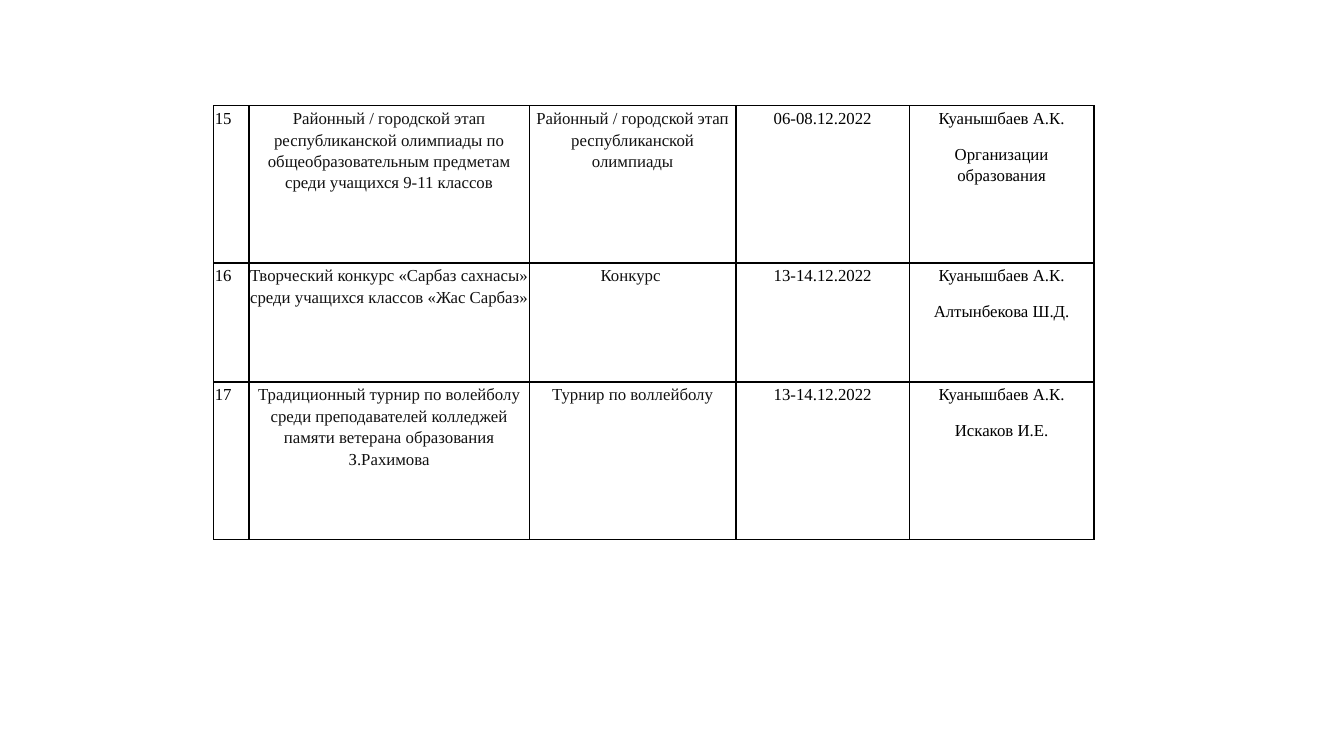
from dataclasses import dataclass

from lxml import etree
from pptx import Presentation
from pptx import util as u
from pptx.dml.color import RGBColor
from pptx.enum import text
from pptx.oxml import ns


@dataclass(frozen=True)
class Theme:
    """Colours, type and line sizes of the slide."""
    font: str = "Times New Roman"
    size: int = 12
    black: str = "000000"
    ink: str = "111111"
    rule: float = 1
    lead: float = 1.15
    gap: int = 10
    inset: float = 0.01


THEME = Theme()
GRID = (1333, 750)
BOX = (212, 105, 873, 430)
COLS = (35, 278, 205, 172, 183)
ROWS = (156, 118, 156)
EVENTS = (
    ("15",
     "Районный / городской этап республиканской олимпиады по "
     "общеобразовательным предметам среди учащихся 9-11 классов",
     "Районный / городской этап республиканской олимпиады",
     "06-08.12.2022", "Куанышбаев А.К.\nОрганизации образования"),
    ("16",
     "Творческий конкурс «Сарбаз сахнасы» среди учащихся классов «Жас Сарбаз»",
     "Конкурс ", "13-14.12.2022", "Куанышбаев А.К.\nАлтынбекова Ш.Д."),
    ("17",
     "Традиционный турнир по волейболу среди преподавателей колледжей "
     "памяти ветерана образования З.Рахимова",
     "Турнир по воллейболу", "13-14.12.2022", "Куанышбаев А.К.\nИскаков И.Е."),
)
CENTRE = dict(align=text.PP_ALIGN.CENTER, after=THEME.gap)
STYLES = (
    dict(),
    dict(CENTRE, color=THEME.ink),
    dict(CENTRE, color=THEME.ink),
    CENTRE,
    CENTRE,
)


def write(frame, words, color=THEME.black, align=text.PP_ALIGN.LEFT, after=0):
    """Fill a text frame with one paragraph per line of words."""
    frame.text = words
    for para in frame.paragraphs:
        para.alignment = align
        para.line_spacing = THEME.lead
        para.space_after = u.Pt(after)
        for run in para.runs:
            run.font.name = THEME.font
            run.font.size = u.Pt(THEME.size)
            run.font.color.rgb = RGBColor.from_string(color)


def edge(cell):
    """Draw the four borders of a cell."""
    props = cell._tc.get_or_add_tcPr()
    for spot, side in enumerate(("lnL", "lnR", "lnT", "lnB")):
        line = etree.Element(ns.qn(f"a:{side}"), w=str(u.Pt(THEME.rule)))
        fill = etree.SubElement(line, ns.qn("a:solidFill"))
        etree.SubElement(fill, ns.qn("a:srgbClr"), val=THEME.black)
        props.insert(spot, line)


def plan(slide, box, unit):
    """Place the table of events in a box given in grid units."""
    left, top, wide, high = (round(n * unit) for n in box)
    table = slide.shapes.add_table(
        len(ROWS), len(COLS), left, top, wide, high).table
    table.first_row = table.horz_banding = False
    for col, share in zip(table.columns, COLS):
        col.width = round(wide * share / sum(COLS))
    for row, share, event in zip(table.rows, ROWS, EVENTS):
        row.height = round(high * share / sum(ROWS))
        for cell, words, style in zip(row.cells, event, STYLES):
            cell.margin_left = cell.margin_right = u.Inches(THEME.inset)
            cell.margin_top = cell.margin_bottom = u.Inches(THEME.inset)
            cell.fill.background()
            write(cell.text_frame, words, **style)
            edge(cell)


def main():
    """Build and save the slide."""
    deck = Presentation()
    deck.slide_width, deck.slide_height = u.Inches(13.33), u.Inches(7.5)
    slide = deck.slides.add_slide(deck.slide_layouts[6])
    plan(slide, BOX, deck.slide_width / GRID[0])
    deck.save("out.pptx")


if __name__ == "__main__":
    main()
